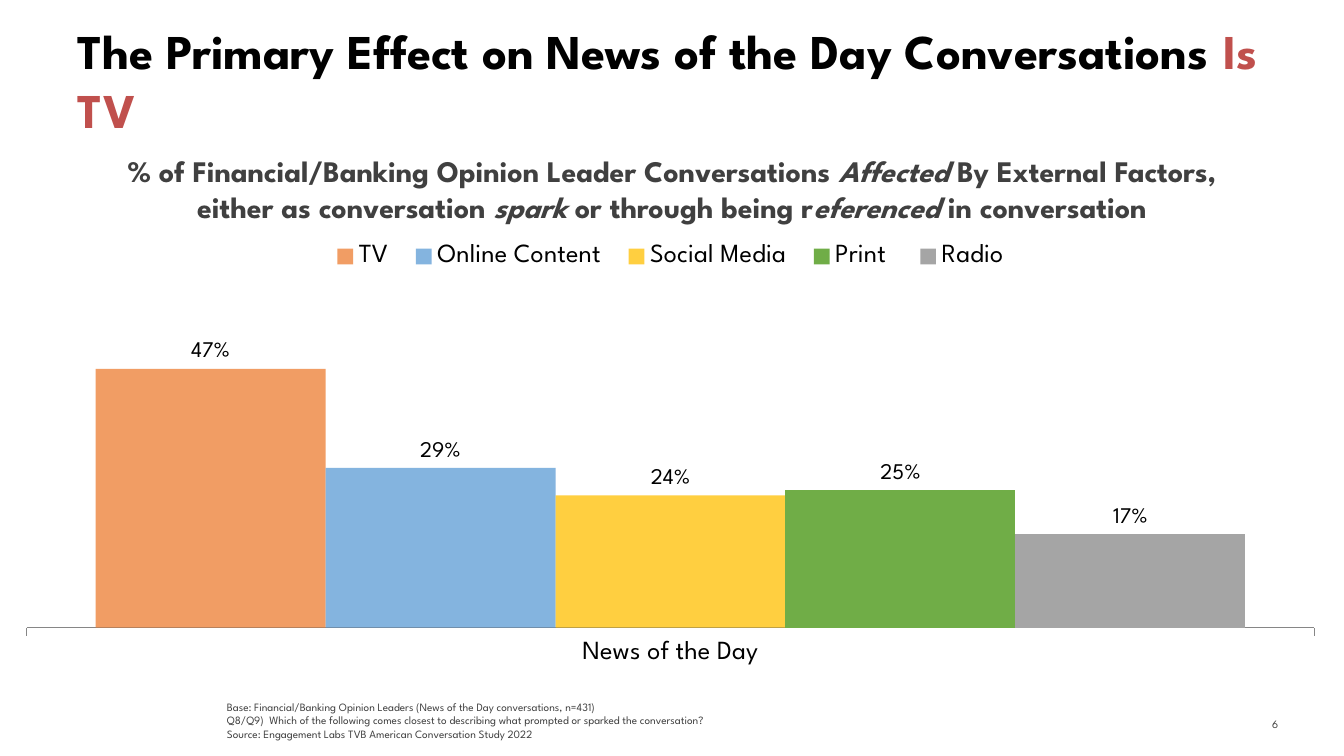
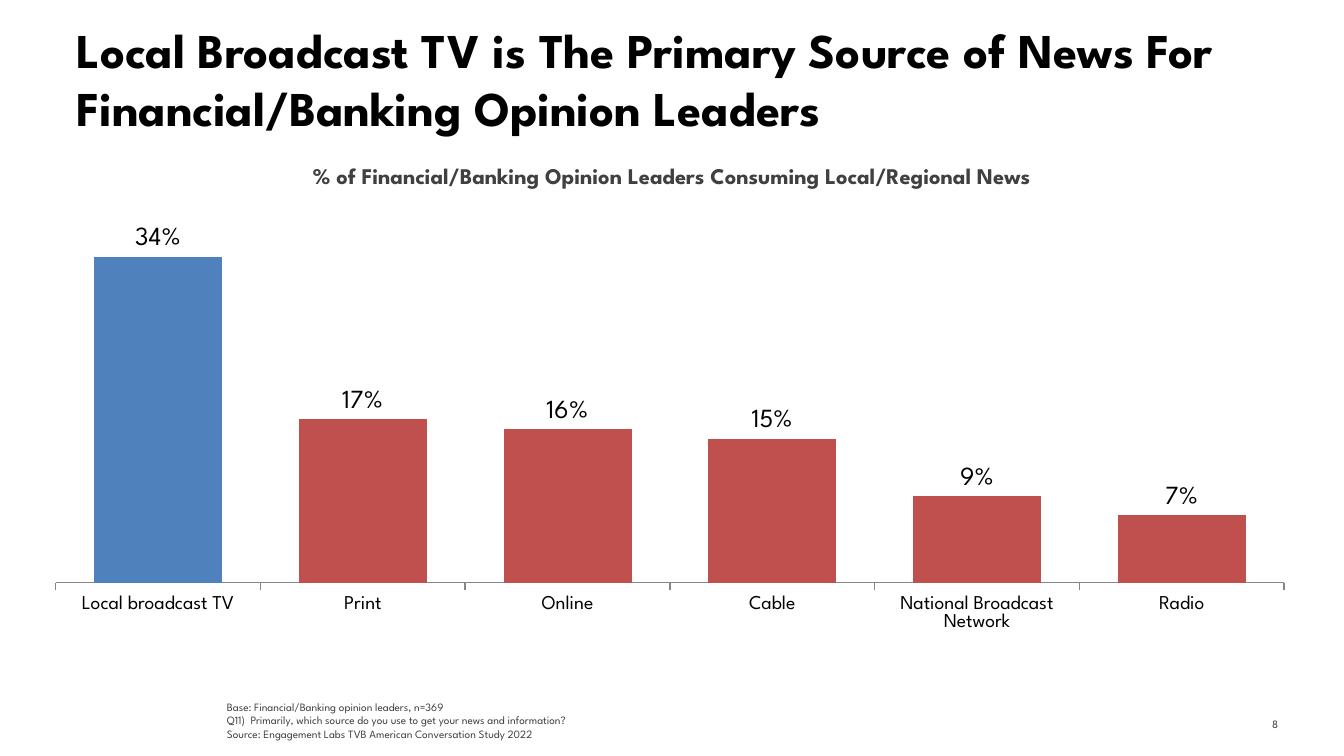
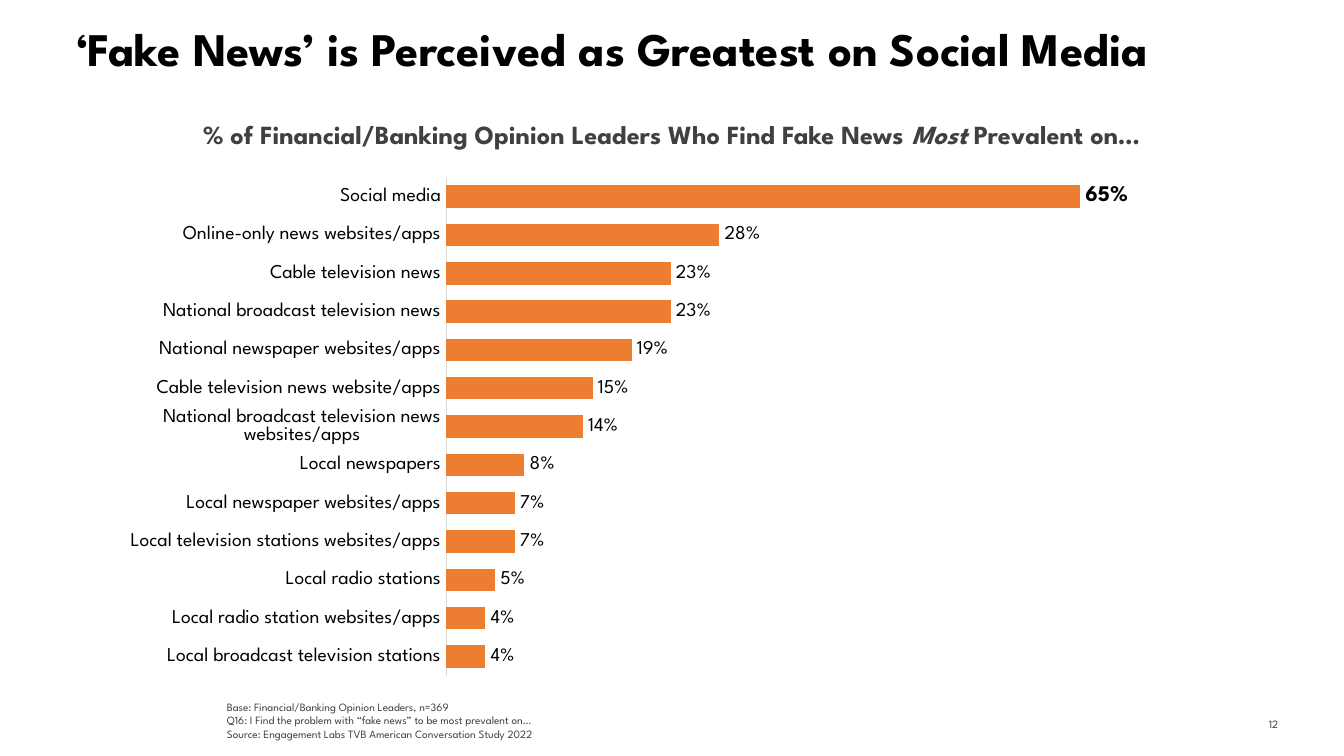
import pptx
import pptx.chart.data
import pptx.dml.color
import pptx.enum.chart
import pptx.enum.text
import pptx.oxml
import pptx.oxml.ns
import pptx.util
from pptx.util import Inches

RGBColor = pptx.dml.color.RGBColor
ChartType = pptx.enum.chart.XL_CHART_TYPE
Tick = pptx.enum.chart.XL_TICK_MARK
Align = pptx.enum.text.PP_ALIGN
Anchor = pptx.enum.text.MSO_ANCHOR

BLACK = RGBColor(0x00, 0x00, 0x00)
DARK = RGBColor(0x40, 0x40, 0x40)
NUMBER_GRAY = RGBColor(0x3C, 0x3C, 0x3A)
AXIS_GRAY = RGBColor(0x86, 0x86, 0x86)
LIGHT_GRAY = RGBColor(0xD9, 0xD9, 0xD9)
RED = RGBColor(0xC0, 0x50, 0x4D)
BLUE = RGBColor(0x4F, 0x81, 0xBD)
ORANGE = RGBColor(0xED, 0x7D, 0x31)
SKY = RGBColor(0x5B, 0x9B, 0xD5)
YELLOW = RGBColor(0xFF, 0xC0, 0x00)
GREEN = RGBColor(0x70, 0xAD, 0x47)
GRAY = RGBColor(0xA5, 0xA5, 0xA5)

FONT = "League Spartan"
SOURCE = "Source: Engagement Labs TVB American Conversation Study 2022"


def style_font(font, size, color=BLACK, bold=False, italic=False):
    font.name = FONT
    font.size = pptx.util.Pt(size)
    font.color.rgb = color
    font.bold = bold
    font.italic = italic


def add_text(page, box, lines, size, color, bold=False, align=Align.LEFT,
             anchor=Anchor.TOP, wrap=True, grow=False):
    frame = page.shapes.add_textbox(*map(Inches, box)).text_frame
    frame.word_wrap = wrap
    frame.vertical_anchor = anchor
    if grow:
        frame.auto_size = pptx.enum.text.MSO_AUTO_SIZE.SHAPE_TO_FIT_TEXT
    for index, spans in enumerate(lines):
        para = frame.add_paragraph() if index else frame.paragraphs[0]
        para.alignment = align
        for text, accent in spans:
            span = para.add_run()
            span.text = text
            style_font(span.font, size, color, bold, accent == "italic")
            if accent == "red":
                span.font.color.rgb = RED
    return frame


def plain(*lines):
    return [[(line, None)] for line in lines]


def add_title(page, box, spans, size=26):
    frame = add_text(page, box, [spans], size, BLACK, bold=True)
    frame.margin_top = 0


def add_subtitle(page, box, lines, size):
    add_text(page, box, lines, size, DARK, bold=True, align=Align.CENTER,
             wrap=False, grow=True)


def add_footer(page, width, notes, number):
    add_text(page, (1.59, 5.16, width, 0.4), plain(*notes, SOURCE), 6, DARK,
             anchor=Anchor.BOTTOM, grow=True)
    frame = add_text(page, (9.04, 5.22, 0.59, 0.3), plain(str(number)), 6,
                     NUMBER_GRAY, align=Align.RIGHT, anchor=Anchor.MIDDLE)
    frame.margin_right = Inches(0.12)
    frame.margin_top = Inches(0.09)


def set_layout(parent, **places):
    values = "".join(f'<c:{key} val="{value}"/>' for key, value in places.items())
    layout = pptx.oxml.parse_xml(
        f'<c:layout {pptx.oxml.ns.nsdecls("c")}><c:manualLayout>'
        f'{values}</c:manualLayout></c:layout>')
    for old in parent.findall(pptx.oxml.ns.qn("c:layout")):
        parent.remove(old)
    return layout


def place_plot(chart, x, y, w, h):
    area = chart._chartSpace.chart.plotArea
    area.insert(0, set_layout(area, layoutTarget="inner", xMode="edge",
                              yMode="edge", x=x, y=y, w=w, h=h))


def place_legend(chart, x, y, w, h):
    legend = chart.legend._element
    layout = set_layout(legend, xMode="edge", yMode="edge", x=x, y=y, w=w, h=h)
    legend.find(pptx.oxml.ns.qn("c:legendPos")).addnext(layout)


def set_alpha(fill, percent):
    fill._xPr.find(".//" + pptx.oxml.ns.qn("a:srgbClr")).append(
        pptx.oxml.parse_xml(
            f'<a:alpha {pptx.oxml.ns.nsdecls("a")} val="{percent * 1000}"/>'))


def add_bars(page, box, kind, categories, series, plot_box, maximum, gap,
             axis_size, label_size, axis_color=AXIS_GRAY, tick=Tick.OUTSIDE):
    data = pptx.chart.data.CategoryChartData(number_format="0%")
    data.categories = categories
    for name, values, color, opacity in series:
        data.add_series(name, values)
    chart = page.shapes.add_chart(kind, *map(Inches, box), data).chart
    chart.has_title = False
    chart.has_legend = False
    style_font(chart.font, axis_size)
    place_plot(chart, *plot_box)

    value_axis = chart.value_axis
    value_axis.minimum_scale = 0
    value_axis.maximum_scale = maximum
    value_axis.has_major_gridlines = False
    value_axis.visible = False

    category_axis = chart.category_axis
    category_axis.has_major_gridlines = False
    category_axis.major_tick_mark = tick
    category_axis.minor_tick_mark = Tick.NONE
    category_axis.format.line.color.rgb = axis_color
    category_axis.format.line.width = pptx.util.Pt(0.75)
    style_font(category_axis.tick_labels.font, axis_size)

    plot = chart.plots[0]
    plot.gap_width = gap
    plot.vary_by_categories = False
    for bars, (name, values, color, opacity) in zip(plot.series, series):
        bars.format.fill.solid()
        bars.format.fill.fore_color.rgb = color
        if opacity < 100:
            set_alpha(bars.format.fill, opacity)
        labels = bars.data_labels
        labels.show_value = True
        labels.number_format = "0%"
        labels.number_format_is_linked = False
        labels.position = pptx.enum.chart.XL_LABEL_POSITION.OUTSIDE_END
        style_font(labels.font, label_size)
    return chart


def build_effect_page(page):
    chart = add_bars(
        page, (0, 1.52, 9.88, 3.54), ChartType.COLUMN_CLUSTERED,
        ["News of the Day"],
        [("TV", [0.47], ORANGE, 75),
         ("Online Content", [0.29], SKY, 75),
         ("Social Media", [0.24], YELLOW, 75),
         ("Print ", [0.25], GREEN, 100),
         ("Radio", [0.17], GRAY, 100)],
        (0.02, 0.08, 0.97, 0.81), 0.7, 60, 14, 12)
    chart.has_legend = True
    chart.legend.position = pptx.enum.chart.XL_LEGEND_POSITION.TOP
    chart.legend.include_in_layout = False
    style_font(chart.legend.font, 14)
    place_legend(chart, 0.24, 0.06, 0.53, 0.1)

    add_title(page, (0.48, 0.16, 9.07, 0.94),
              [("The Primary Effect on News of the Day Conversations ", None),
               ("Is TV", "red")])
    add_subtitle(page, (0.4, 1.09, 9.2, 0.64), [
        [("% of Financial/Banking Opinion Leader Conversations ", None),
         ("Affected", "italic"), (" By External Factors,", None)],
        [("either as conversation ", None), ("spark", "italic"),
         (" or through being r", None), ("eferenced", "italic"),
         (" in conversation", None)]], 16)
    add_footer(page, 8.42, [
        "Base: Financial/Banking Opinion Leaders (News of the Day conversations, n=431)",
        "Q8/Q9)  Which of the following comes closest to describing what "
        "prompted or sparked the conversation?"], 6)


def build_source_page(page):
    add_title(page, (0.47, 0.15, 9.26, 0.89),
              [("Local Broadcast TV is The Primary Source of News For "
                "Financial/Banking Opinion Leaders", None)])
    chart = add_bars(
        page, (0.41, 0.97, 9.15, 4.26), ChartType.COLUMN_CLUSTERED,
        ["Local broadcast TV", "Print", "Online", "Cable",
         "National Broadcast Network", "Radio"],
        [("Series 1", [0.34, 0.17, 0.16, 0.15, 0.09, 0.07], RED, 100)],
        (0, 0.12, 1, 0.67), 0.4, 60, 10.5, 14)
    leader = chart.plots[0].series[0].points[0].format.fill
    leader.solid()
    leader.fore_color.rgb = BLUE
    add_subtitle(page, (1.91, 1.16, 6.18, 0.3), plain(
        "% of Financial/Banking Opinion Leaders Consuming Local/Regional News"), 12)
    add_footer(page, 8.15, [
        "Base: Financial/Banking opinion leaders, n=369",
        "Q11)  Primarily, which source do you use to get your news and information?"], 8)


def build_fake_news_page(page):
    shares = {
        "Social media": 0.65,
        "Online-only news websites/apps": 0.28,
        "Cable television news": 0.23,
        "National broadcast television news": 0.23,
        "National newspaper websites/apps": 0.19,
        "Cable television news website/apps": 0.15,
        "National broadcast television news websites/apps": 0.14,
        "Local newspapers": 0.08,
        "Local newspaper websites/apps": 0.07,
        "Local television stations websites/apps": 0.07,
        "Local radio stations": 0.05,
        "Local radio station websites/apps": 0.04,
        "Local broadcast television stations": 0.04,
    }
    chart = add_bars(
        page, (0.51, 1.16, 9.07, 4.03), ChartType.BAR_CLUSTERED, list(shares),
        [("Series 1", list(shares.values()), ORANGE, 100)],
        (0.31, 0.04, 0.56, 0.92), 0.7, 70, 10.5, 10.5, LIGHT_GRAY, Tick.NONE)
    chart.category_axis.reverse_order = True
    top_label = chart.plots[0].series[0].points[0].data_label
    style_font(top_label.font, 12, bold=True)
    top_label.position = pptx.enum.chart.XL_LABEL_POSITION.OUTSIDE_END

    add_title(page, (0.47, 0.15, 9.19, 0.68),
              [("‘Fake News’ is Perceived as Greatest on Social Media", None)], 25)
    add_footer(page, 7.53, [
        "Base: Financial/Banking Opinion Leaders, n=369",
        "Q16: I Find the problem with “fake news” to be most prevalent on…"], 12)
    add_subtitle(page, (1.03, 0.83, 7.93, 0.34), [
        [("% of Financial/Banking Opinion Leaders Who Find Fake News ", None),
         ("Most", "italic"), (" Prevalent on…", None)]], 14)


def main():
    deck = pptx.Presentation()
    deck.slide_width = Inches(10)
    deck.slide_height = deck.slide_width * 9 // 16
    for build in (build_effect_page, build_source_page, build_fake_news_page):
        build(deck.slides.add_slide(deck.slide_layouts[6]))
    deck.save("out.pptx")


if __name__ == "__main__":
    main()
